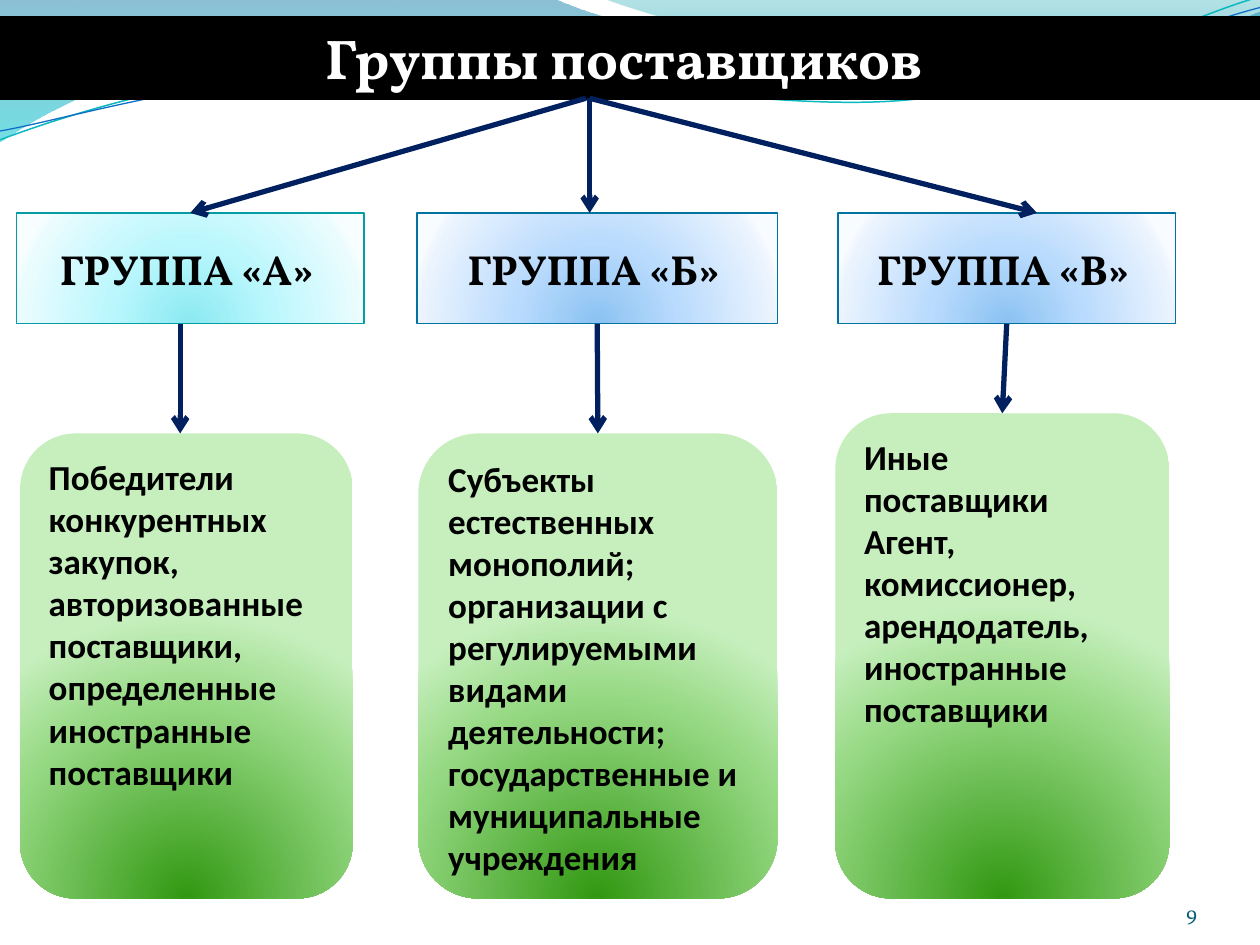
from dataclasses import dataclass

from lxml import etree
from pptx import Presentation, oxml, util as u
from pptx.dml.color import RGBColor
from pptx.enum import shapes, text
from pptx.oxml.ns import nsdecls, qn

COLORS = {
    "black": "000000", "white": "FFFFFF", "arrow": "002060", "number": "045D75",
    "teal_line": "069CA3", "blue_line": "0074A1",
    "wave_teal": "0AB8BF", "wave_blue": "0F6FC6",
}
GREEN = ((0, "319811"), (68, "95D882"), (100, "C6EFBD"))
TEAL = ((0, "8BE9F1"), (43, "B9F7FD"), (93, "EAFCFE"), (100, "F8FEFF"))
BLUE = ((0, "8BC2F1"), (43, "B9DBFD"), (93, "EAF3FE"), (100, "F8FBFF"))
LINEAR = '<a:lin ang="5400000" scaled="1"/>'
GLOW = '<a:path path="circle"><a:fillToRect l="50000" t="130000" r="50000" b="-30000"/></a:path>'
HEADING_FONT, BODY_FONT = "Vollkorn", "Calibri"
BOX_TOP, BOX_HEIGHT, CARD_BOTTOM = 1.69, 0.88, 7.13
TITLE_BOTTOM = 0.78


@dataclass
class Wave:
    start: tuple
    segments: tuple
    stops: tuple = ()
    line: str = ""
    width: float = 0


@dataclass
class Group:
    name: str
    box_left: float
    box_width: float
    stops: tuple
    line: str
    card_left: float
    card_top: float
    card_width: float
    lines: tuple


WAVES = (
    Wave((0, 0), ((4.4, -0.01), (4.76, 0.17, 6.64, 0.63, 7.58, 0.63),
                  (8.53, 0.63, 9.58, 0.26, 10, 0.09), (10.01, 0.36),
                  (9.83, 0.44, 8.7, 0.76, 7.46, 0.75), (6.22, 0.75, 3.82, 0.28, 2.57, 0.34),
                  (1.29, 0.36, 0.46, 0.83, -0.01, 1.13), (0, 0)),
         stops=((0, "0074A1", 45), (100, "00C6CF", 55))),
    Wave((4.79, -0.01), ((5.09, 0.11, 6.82, 0.62, 7.69, 0.65),
                         (8.56, 0.69, 9.61, 0.32, 10, 0.21), (10, 0), (4.79, -0.01)),
         stops=((0, "00A1A9", 30), (80, "008BBF", 45))),
    Wave((0, 1.11), ((0.48, 0.93, 1.58, 0.57, 2.77, 0.52), (3.95, 0.47, 5.93, 0.89, 7.13, 0.8),
                     (8.33, 0.71, 9.38, 0.15, 9.98, -0.02)), line="wave_teal", width=0.85),
    Wave((0, 1.04), ((0.47, 0.96, 1.64, 0.61, 2.83, 0.56), (4.03, 0.51, 5.97, 0.84, 7.17, 0.75),
                     (8.36, 0.67, 9.41, 0.21, 10, 0.06)), line="wave_blue", width=0.75),
)
GROUPS = (
    Group("А", 0.13, 2.76, TEAL, "teal_line", 0.16, 3.44, 2.64,
          ("Победители конкурентных закупок, авторизованные поставщики,",
           "определенные иностранные поставщики")),
    Group("Б", 3.31, 2.86, BLUE, "blue_line", 3.32, 3.44, 2.85,
          ("Субъекты",
           "естественных монополий; организации с регулируемыми видами деятельности;",
           "государственные и муниципальные учреждения")),
    Group("В", 6.65, 2.68, BLUE, "blue_line", 6.63, 3.28, 2.65,
          ("Иные поставщики", "Агент, комиссионер, арендодатель, иностранные поставщики")),
)


def color(name: str) -> RGBColor:
    return RGBColor.from_string(COLORS[name])


def set_gradient(shape, stops: tuple, direction: str) -> None:
    entries = ""
    for position, value, *alpha in stops:
        opacity = f'<a:alpha val="{alpha[0] * 1000}"/>' if alpha else ""
        entries += f'<a:gs pos="{position * 1000}"><a:srgbClr val="{value}">{opacity}</a:srgbClr></a:gs>'
    gradient = oxml.parse_xml(f'<a:gradFill {nsdecls("a")} rotWithShape="1">'
                              f'<a:gsLst>{entries}</a:gsLst>{direction}</a:gradFill>')
    shape.fill.background()
    properties = shape.element.spPr
    properties.replace(properties.find(qn("a:noFill")), gradient)


def set_line(shape, name: str, width: float) -> None:
    shape.line.color.rgb = color(name)
    shape.line.width = u.Pt(width)


def write(shape, lines: tuple, size: float, font: str, ink: str, align, anchor, bold=True) -> None:
    frame = shape.text_frame
    frame.word_wrap = True
    frame.vertical_anchor = anchor
    frame.text = "\n".join(lines)
    for paragraph in frame.paragraphs:
        paragraph.alignment = align
        for run in paragraph.runs:
            run.font.size, run.font.name, run.font.bold = u.Pt(size), font, bold
            run.font.color.rgb = color(ink)


def bend_segments(shape, segments: tuple) -> None:
    straight_lines = list(shape.element.iter(qn("a:lnTo")))
    for straight, segment in zip(straight_lines, segments):
        if len(segment) == 2:
            continue
        curve = etree.Element(qn("a:cubicBezTo"))
        for x, y in zip(segment[::2], segment[1::2]):
            etree.SubElement(curve, qn("a:pt"), x=str(u.Inches(x) - shape.left),
                             y=str(u.Inches(y) - shape.top))
        straight.getparent().replace(straight, curve)


def draw_wave(slide, wave: Wave) -> None:
    builder = slide.shapes.build_freeform(u.Inches(wave.start[0]), u.Inches(wave.start[1]))
    ends = [tuple(map(u.Inches, segment[-2:])) for segment in wave.segments]
    builder.add_line_segments(ends, close=bool(wave.stops))
    shape = builder.convert_to_shape()
    bend_segments(shape, wave.segments)
    shape.shadow.inherit = False
    if wave.stops:
        set_gradient(shape, wave.stops, LINEAR)
        shape.line.fill.background()
    else:
        shape.fill.background()
        set_line(shape, wave.line, wave.width)


def draw_panel(slide, kind, left: float, top: float, width: float, height: float, stops: tuple):
    shape = slide.shapes.add_shape(kind, *map(u.Inches, (left, top, width, height)))
    set_gradient(shape, stops, GLOW)
    shape.line.fill.background()
    shape.shadow.inherit = False
    return shape


def draw_arrow(slide, start: tuple, end: tuple, source=None, target=None) -> None:
    arrow = slide.shapes.add_connector(shapes.MSO_CONNECTOR.STRAIGHT, *map(u.Inches, start + end))
    if source is not None:
        arrow.begin_connect(source, 2)
    if target is not None:
        arrow.end_connect(target, 0)
    set_line(arrow, "arrow", 3)
    properties = arrow.element.spPr
    etree.SubElement(properties.find(qn("a:ln")), qn("a:tailEnd"), type="arrow")
    etree.SubElement(properties, qn("a:effectLst"))


def draw_title(slide) -> None:
    title = slide.shapes.title
    title.element.getparent().append(title.element)
    title.left, title.top, title.width, title.height = map(u.Inches, (0, 0.14, 10, 0.64))
    title.fill.solid()
    title.fill.fore_color.rgb = color("black")
    set_line(title, "black", 2)
    write(title, ("Группы поставщиков ",), 32, HEADING_FONT, "white",
          text.PP_ALIGN.CENTER, text.MSO_ANCHOR.TOP)
    title.text_frame.auto_size = text.MSO_AUTO_SIZE.NONE


def draw_card(slide, group: Group):
    card = draw_panel(slide, shapes.MSO_SHAPE.ROUNDED_RECTANGLE, group.card_left, group.card_top,
                      group.card_width, CARD_BOTTOM - group.card_top, GREEN)
    write(card, group.lines, 20, BODY_FONT, "black", text.PP_ALIGN.LEFT, text.MSO_ANCHOR.TOP)
    return card


def draw_box(slide, group: Group):
    box = draw_panel(slide, shapes.MSO_SHAPE.RECTANGLE, group.box_left, BOX_TOP,
                     group.box_width, BOX_HEIGHT, group.stops)
    set_line(box, group.line, 0.75)
    write(box, (f"ГРУППА «{group.name}» ",), 24, HEADING_FONT, "black",
          text.PP_ALIGN.CENTER, text.MSO_ANCHOR.MIDDLE)
    return box


def draw_number(slide) -> None:
    number = slide.shapes.add_textbox(*map(u.Inches, (8.67, 6.95, 0.83, 0.4)))
    frame = number.text_frame
    frame.margin_left = frame.margin_right = frame.margin_top = frame.margin_bottom = 0
    write(number, ("9",), 12, HEADING_FONT, "number", text.PP_ALIGN.RIGHT,
          text.MSO_ANCHOR.BOTTOM, bold=False)


def main() -> None:
    presentation = Presentation()
    presentation.slide_width, presentation.slide_height = u.Inches(10), u.Inches(7.5)
    slide = presentation.slides.add_slide(presentation.slide_layouts[5])
    for wave in WAVES:
        draw_wave(slide, wave)
    draw_title(slide)
    cards = [draw_card(slide, group) for group in GROUPS]
    boxes = [draw_box(slide, group) for group in GROUPS]
    box_bottom = BOX_TOP + BOX_HEIGHT
    draw_arrow(slide, (4.65, TITLE_BOTTOM), (1.51, BOX_TOP), target=boxes[0])
    for end in (4.68, 8.23):
        draw_arrow(slide, (4.68, TITLE_BOTTOM), (end, BOX_TOP))
    draw_arrow(slide, (1.43, box_bottom), (1.43, GROUPS[0].card_top))
    for box, card in zip(boxes[1:], cards[1:]):
        draw_arrow(slide, (0, 0), (0, 0), box, card)
    draw_number(slide)
    presentation.save("out.pptx")


if __name__ == "__main__":
    main()
